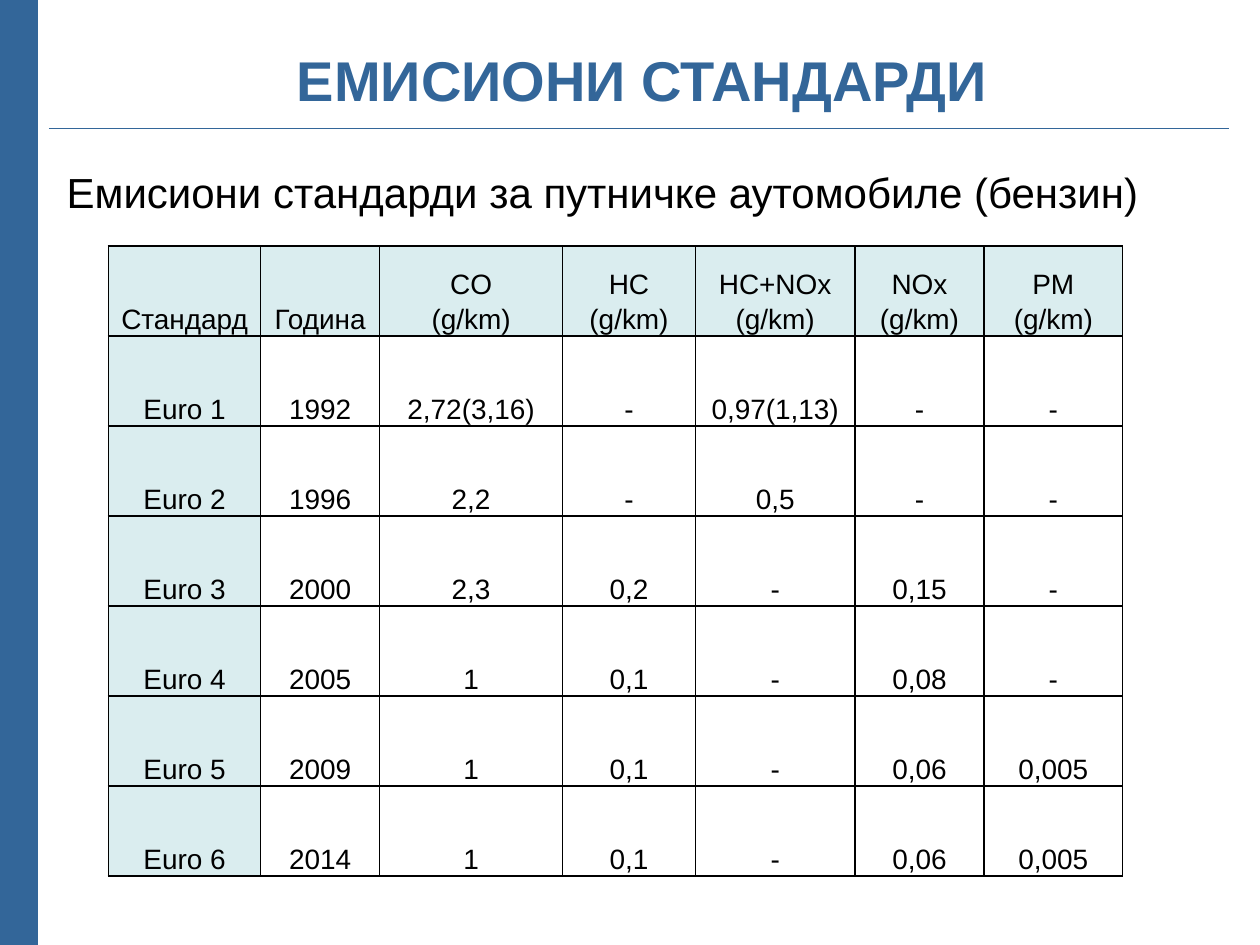
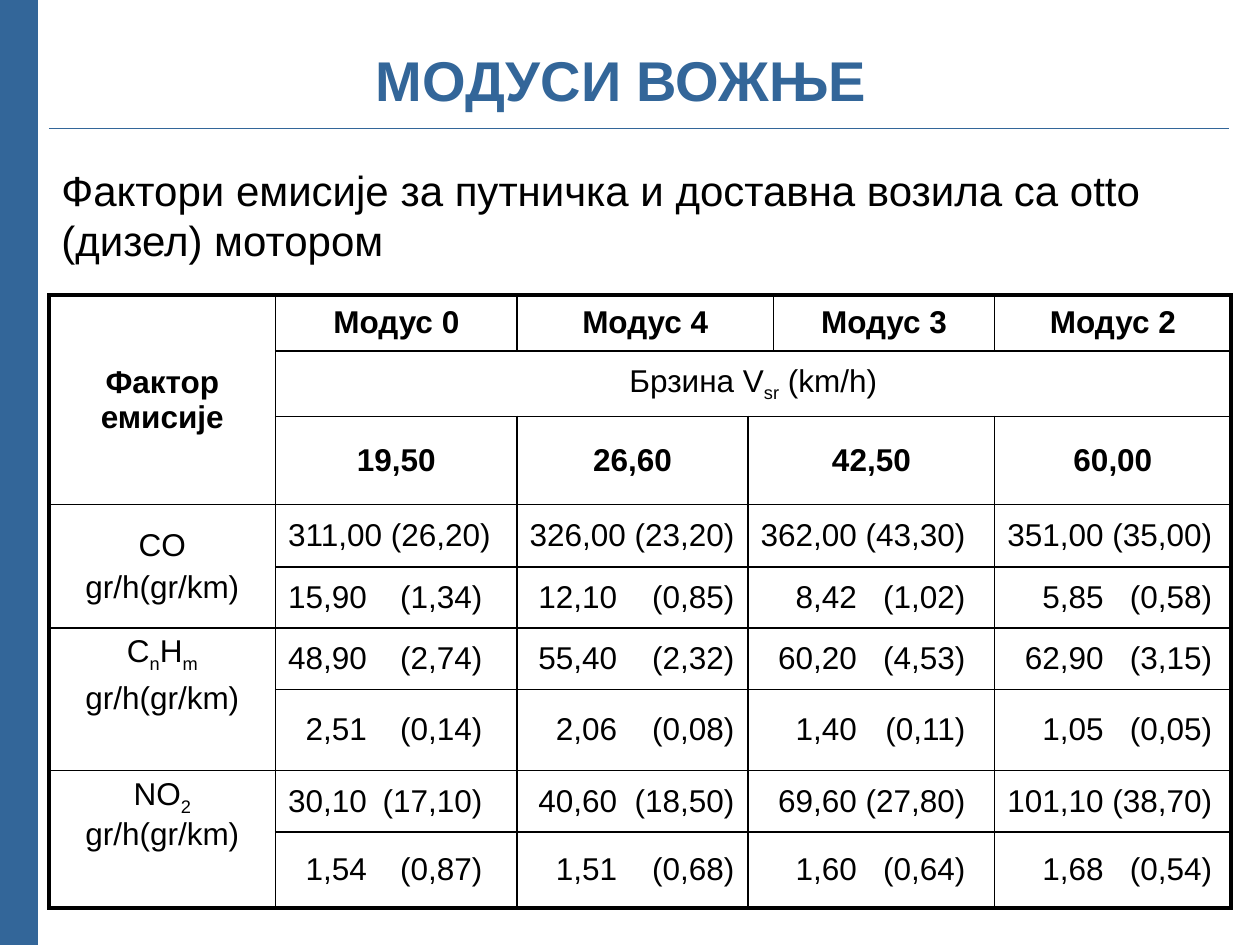
from dataclasses import dataclass, replace

from lxml.etree import SubElement
from pptx import Presentation
from pptx.dml.color import RGBColor
from pptx.enum.shapes import MSO_CONNECTOR
from pptx.enum.text import MSO_ANCHOR as Anchor, PP_ALIGN as Align
from pptx.oxml.ns import qn
from pptx.slide import Slide
from pptx.table import Table, _Cell as Cell
from pptx.text.text import TextFrame, _Paragraph as Paragraph
from pptx.util import Pt

COLORS = {"accent": "336699", "text": "000000", "header": "DAEDEF", "border": "000000"}
FONT = "Arial"
SLIDE_WIDTH, SLIDE_HEIGHT = 720, 540
THIN, THICK = 1, 2.25


@dataclass(frozen=True)
class Box:
    left: float
    top: float
    width: float
    height: float


@dataclass(frozen=True)
class TextStyle:
    size: float
    color: str = "text"
    bold: bool = False
    align: Align = Align.LEFT
    line_spacing: float | None = None
    space_before: float = 0


@dataclass(frozen=True)
class Rule:
    start: tuple[float, float]
    end: tuple[float, float]
    width: float


TITLE = TextStyle(32, "accent", bold=True, align=Align.CENTER)
SUBTITLE = TextStyle(24)
STANDARD = TextStyle(16, align=Align.CENTER, line_spacing=1.15)
READING = TextStyle(18, space_before=3.6)
LABEL = replace(READING, align=Align.CENTER)
HEADING = replace(LABEL, bold=True)

FRAME_RULES = (
    Rule((1.5, 0), (1.5, SLIDE_HEIGHT), 40),
    Rule((28, 73.25), (702.5, 73.25), 0.75),
)

STANDARD_COLUMNS = (87, 68, 104.5, 76, 91, 74, 79)
STANDARD_ROW_HEIGHT = 51.43
STANDARDS = (
    ("Стандард", "Година", "CO\n(g/km)", "HC\n(g/km)", "HC+NOx\n(g/km)",
     "NOx\n(g/km)", "PM\n(g/km)"),
    ("Euro 1", "1992", "2,72(3,16)", "-", "0,97(1,13)", "-", "-"),
    ("Euro 2", "1996", "2,2", "-", "0,5", "-", "-"),
    ("Euro 3", "2000", "2,3", "0,2", "-", "0,15", "-"),
    ("Euro 4", "2005", "1", "0,1", "-", "0,08", "-"),
    ("Euro 5", "2009", "1", "0,1", "-", "0,06", "0,005"),
    ("Euro 6", "2014", "1", "0,1", "-", "0,06", "0,005"),
)

# The narrow fourth column lets the mode headings end beside the speeds.
MODE_COLUMNS = (129.5, 138, 132, 14.5, 126.5, 135)
MODE_ROWS = (32, 37.5, 50.5, 35.5, 35, 35, 46.5, 35, 43.5)
MODE_HEADINGS = {
    (0, 0): "Фактор емисије",
    (0, 1): "Модус 0", (0, 2): "Модус 4", (0, 4): "Модус 3", (0, 5): "Модус 2",
    (2, 1): "19,50", (2, 2): "26,60", (2, 3): "42,50", (2, 5): "60,00",
}
MODE_LABELS = {
    (1, 1): "Брзина V{sr} (km/h)",
    (3, 0): "CO\ngr/h(gr/km)",
    (5, 0): "C{n}H{m}\ngr/h(gr/km)",
    (7, 0): "NO{2 }gr/h(gr/km)",
}
TOP_LABELS = ((5, 0), (7, 0))
FIRST_READING_ROW = 3
READINGS = (
    ("311,00 (26,20)", "326,00 (23,20)", "362,00 (43,30)", "351,00 (35,00)"),
    ("15,90 (1,34)", "12,10 (0,85)", "8,42 (1,02)", "5,85 (0,58)"),
    ("48,90 (2,74)", "55,40 (2,32)", "60,20 (4,53)", "62,90 (3,15)"),
    ("2,51 (0,14)", "2,06 (0,08)", "1,40 (0,11)", "1,05 (0,05)"),
    ("30,10 (17,10)", "40,60 (18,50)", "69,60 (27,80)", "101,10 (38,70)"),
    ("1,54 (0,87)", "1,51 (0,68)", "1,60 (0,64)", "1,68 (0,54)"),
)
# Right tab stops of the two figures in each reading column.
READING_TABS = {1: (45, 111), 2: (50, 117), 3: (55, 117), 5: (55, 117)}
MODE_SPANS = (
    [((0, 0), (2, 0)), ((0, 2), (0, 3)), ((1, 1), (1, 5))]
    + [((row, 3), (row, 4)) for row in range(2, len(MODE_ROWS))]
    + [((row, 0), (row + 1, 0)) for row in (3, 5, 7)]
)


def write(frame: TextFrame, text: str, style: TextStyle) -> None:
    """Write one paragraph a line; parts in braces become subscripts."""
    for number, line in enumerate(text.split("\n")):
        paragraph = frame.add_paragraph() if number else frame.paragraphs[0]
        paragraph.alignment = style.align
        paragraph.line_spacing = style.line_spacing
        paragraph.space_before = Pt(style.space_before)
        font = paragraph.font
        font.name, font.size, font.bold = FONT, Pt(style.size), style.bold
        font.color.rgb = RGBColor.from_string(COLORS[style.color])
        for index, part in enumerate(line.replace("}", "{").split("{")):
            if part:
                run = paragraph.add_run()
                run.text = part
                if index % 2:
                    run._r.get_or_add_rPr().set("baseline", "-25000")


def set_right_tabs(paragraph: Paragraph, stops: tuple[float, ...]) -> None:
    properties = paragraph._p.get_or_add_pPr()
    tabs = SubElement(properties, qn("a:tabLst"))
    for stop in stops:
        SubElement(tabs, qn("a:tab"), pos=str(Pt(stop)), algn="r")
    properties.find(qn("a:defRPr")).addprevious(tabs)


def set_borders(cell: Cell, widths: dict[str, float]) -> None:
    properties = cell._tc.get_or_add_tcPr()
    for side in "LRTB":
        line = SubElement(properties, qn(f"a:ln{side}"), w=str(Pt(widths[side])))
        fill = SubElement(line, qn("a:solidFill"))
        SubElement(fill, qn("a:srgbClr"), val=COLORS["border"])


def draw_grid(table: Table, outer: float) -> None:
    """Border every visible cell, with the outer width on the table's edge."""
    row_count, column_count = len(table.rows), len(table.columns)
    for row in range(row_count):
        for column in range(column_count):
            cell = table.cell(row, column)
            if cell.is_spanned:
                continue
            height = cell.span_height if cell.is_merge_origin else 1
            width = cell.span_width if cell.is_merge_origin else 1
            on_edge = {
                "L": column == 0,
                "R": column + width == column_count,
                "T": row == 0,
                "B": row + height == row_count,
            }
            set_borders(cell, {side: outer if edge else THIN
                               for side, edge in on_edge.items()})


def add_plain_table(slide: Slide, left: float, top: float,
                    columns: tuple[float, ...], rows: tuple[float, ...]) -> Table:
    table = slide.shapes.add_table(
        len(rows), len(columns), Pt(left), Pt(top), Pt(sum(columns)), Pt(sum(rows))
    ).table
    table.first_row = table.horz_banding = False
    for column, width in zip(table.columns, columns):
        column.width = Pt(width)
    for row, height in zip(table.rows, rows):
        row.height = Pt(height)
    for cell in table.iter_cells():
        cell.vertical_anchor = Anchor.MIDDLE
    return table


def add_framed_slide(deck: Presentation, title: str, title_width: float,
                     subtitle: str, subtitle_box: Box) -> Slide:
    """Add a slide with its title, side band, title rule and subtitle."""
    slide = deck.slides.add_slide(deck.slide_layouts[5])
    heading = slide.shapes.title
    heading.left, heading.top = Pt(31), Pt(0)
    heading.width, heading.height = Pt(title_width), Pt(90)
    heading.text_frame.vertical_anchor = Anchor.MIDDLE
    write(heading.text_frame, title, TITLE)

    for rule in FRAME_RULES:
        line = slide.shapes.add_connector(
            MSO_CONNECTOR.STRAIGHT, *map(Pt, rule.start + rule.end))
        line.line.width = Pt(rule.width)
        line.line.color.rgb = RGBColor.from_string(COLORS["accent"])
        SubElement(line._element.spPr, qn("a:effectLst"))

    box = subtitle_box
    frame = slide.shapes.add_textbox(
        Pt(box.left), Pt(box.top), Pt(box.width), Pt(box.height)).text_frame
    frame.word_wrap = True
    frame.vertical_anchor = Anchor.MIDDLE
    write(frame, subtitle, SUBTITLE)
    return slide


def add_standards_slide(deck: Presentation) -> None:
    slide = add_framed_slide(
        deck, "ЕМИСИОНИ СТАНДАРДИ", 672,
        "Емисиони стандарди за путничке аутомобиле (бензин)",
        Box(31, 91.5, 663, 36))
    table = add_plain_table(slide, 62, 140.5, STANDARD_COLUMNS,
                            (STANDARD_ROW_HEIGHT,) * len(STANDARDS))
    draw_grid(table, THIN)
    for row, values in enumerate(STANDARDS):
        for column, value in enumerate(values):
            cell = table.cell(row, column)
            cell.margin_left = cell.margin_right = Pt(5)
            cell.margin_top = cell.margin_bottom = Pt(0)
            cell.vertical_anchor = Anchor.BOTTOM
            write(cell.text_frame, value, STANDARD)
            if row == 0 or column == 0:
                cell.fill.solid()
                cell.fill.fore_color.rgb = RGBColor.from_string(COLORS["header"])
            else:
                cell.fill.background()


def write_reading(cell: Cell, reading: str, stops: tuple[float, float]) -> None:
    """Align both figures at tab stops, unless the first fills its whole place."""
    hourly, per_km = reading.split()
    if len(hourly) == len("000,00"):
        write(cell.text_frame, reading, READING)
    else:
        write(cell.text_frame, f"\t{hourly}\t{per_km}", READING)
        set_right_tabs(cell.text_frame.paragraphs[0], stops)


def add_modes_slide(deck: Presentation) -> None:
    slide = add_framed_slide(
        deck, "МОДУСИ ВОЖЊЕ", 648,
        "Фактори емисије за путничка и доставна возила са otto (дизел) мотором",
        Box(28, 90, 663, 65.5))
    table = add_plain_table(slide, 28, 168.5, MODE_COLUMNS, MODE_ROWS)
    for first, last in MODE_SPANS:
        table.cell(*first).merge(table.cell(*last))
    draw_grid(table, THICK)
    for cell in table.iter_cells():
        cell.fill.background()
    for texts, style in ((MODE_HEADINGS, HEADING), (MODE_LABELS, LABEL)):
        for place, text in texts.items():
            write(table.cell(*place).text_frame, text, style)
    for place in TOP_LABELS:
        table.cell(*place).vertical_anchor = Anchor.TOP
    for row, readings in enumerate(READINGS, FIRST_READING_ROW):
        for (column, stops), reading in zip(READING_TABS.items(), readings):
            write_reading(table.cell(row, column), reading, stops)


def main() -> None:
    deck = Presentation()
    deck.slide_width, deck.slide_height = Pt(SLIDE_WIDTH), Pt(SLIDE_HEIGHT)
    add_standards_slide(deck)
    add_modes_slide(deck)
    deck.save("out.pptx")


if __name__ == "__main__":
    main()
